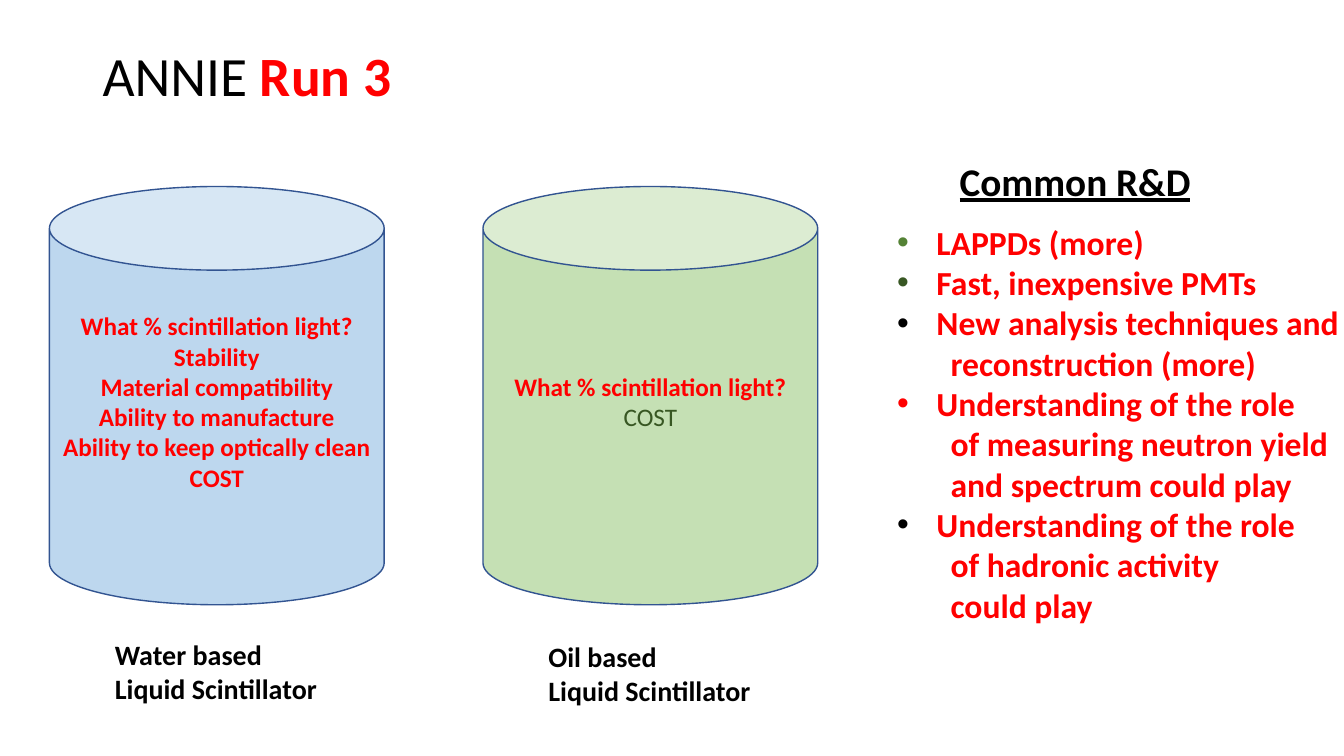
from dataclasses import dataclass

from lxml import etree
from pptx import Presentation
from pptx import util as u
from pptx.dml.color import RGBColor
from pptx.enum import shapes, text
from pptx.oxml import ns

FONT = "Calibri"
BLACK, RED, DARK_GREEN, MID_GREEN = "000000", "FF0000", "385723", "548235"
OUTLINE = "325491"
TANK_TOP, TANK_WIDTH, TANK_HEIGHT = 1.85, 3.32, 4.15
BULLET_INDENT, CONTINUATION_INDENT = 0.39, 0.53


@dataclass(frozen=True)
class Span:
    words: str
    size: float
    color: str = BLACK
    bold: bool = True
    underline: bool = False


@dataclass(frozen=True)
class Tank:
    left: float
    fill: str
    questions: list[Span]
    caption: str
    caption_top: float


@dataclass(frozen=True)
class Topic:
    bullet_color: str
    lines: list[str]


TANKS = [
    Tank(0.49, "BDD7EE",
         [Span(words, 18, RED) for words in (
             "What % scintillation light?", "Stability", "Material compatibility",
             "Ability to manufacture", "Ability to keep optically clean", "COST")],
         "Water based", 6.28),
    Tank(4.79, "C5E0B4",
         [Span("What % scintillation light?", 18, RED),
          Span("COST", 18, DARK_GREEN, bold=False)],
         "Oil based", 6.3),
]

TOPICS = [
    Topic(MID_GREEN, ["LAPPDs (more)"]),
    Topic(DARK_GREEN, ["Fast, inexpensive PMTs"]),
    Topic(BLACK, ["New analysis techniques and", "reconstruction (more)"]),
    Topic(RED, ["Understanding of the role", "of measuring neutron yield",
                "and spectrum could play"]),
    Topic(BLACK, ["Understanding of the role", "of hadronic activity", "could play"]),
]


def rgb(color: str) -> RGBColor:
    return RGBColor.from_string(color)


def add_spans(para, spans: list[Span]) -> None:
    for span in spans:
        run = para.add_run()
        run.text = span.words
        run.font.name = FONT
        run.font.size = u.Pt(span.size)
        run.font.bold = span.bold
        run.font.underline = span.underline
        run.font.color.rgb = rgb(span.color)


def write_lines(frame, lines: list[list[Span]]) -> list:
    """Put each list of spans in its own paragraph and return the paragraphs."""
    for index, spans in enumerate(lines):
        para = frame.paragraphs[0] if index == 0 else frame.add_paragraph()
        add_spans(para, spans)
    return list(frame.paragraphs)


def add_label(page, left: float, top: float, width: float, height: float,
              lines: list[list[Span]]) -> list:
    """Add a text box that fits its unwrapped lines; return its paragraphs."""
    box = page.shapes.add_textbox(*map(u.Inches, (left, top, width, height)))
    box.text_frame.word_wrap = False
    box.text_frame.auto_size = text.MSO_AUTO_SIZE.SHAPE_TO_FIT_TEXT
    return write_lines(box.text_frame, lines)


def add_title(page) -> None:
    box = page.shapes.add_textbox(*map(u.Inches, (0.92, 0.4, 11.5, 0.76)))
    box.text_frame.word_wrap = True
    box.text_frame.vertical_anchor = text.MSO_ANCHOR.MIDDLE
    spans = [Span("ANNIE ", 39.6, bold=False), Span("Run 3", 39.6, RED)]
    write_lines(box.text_frame, [spans])[0].line_spacing = 0.9


def add_tank(page, tank: Tank) -> None:
    can = page.shapes.add_shape(
        shapes.MSO_SHAPE.CAN,
        *map(u.Inches, (tank.left, TANK_TOP, TANK_WIDTH, TANK_HEIGHT)))
    can.shadow.inherit = False
    can.fill.solid()
    can.fill.fore_color.rgb = rgb(tank.fill)
    can.line.color.rgb = rgb(OUTLINE)
    can.line.width = u.Pt(1)
    frame = can.text_frame
    frame.word_wrap = True
    frame.vertical_anchor = text.MSO_ANCHOR.MIDDLE
    frame.margin_bottom = u.Inches(0.35)
    for para in write_lines(frame, [[question] for question in tank.questions]):
        para.alignment = text.PP_ALIGN.CENTER
    add_label(page, tank.left + 0.55, tank.caption_top, 2.22, 0.77,
              [[Span(tank.caption, 20)], [Span("Liquid Scintillator", 20)]])


def indent(para, left: float, first: float = 0) -> None:
    properties = para._p.get_or_add_pPr()
    properties.set("marL", str(u.Inches(left)))
    properties.set("indent", str(u.Inches(first)))


def add_bullet(para, color: str) -> None:
    properties = para._p.get_or_add_pPr()
    bullet_color = etree.SubElement(properties, ns.qn("a:buClr"))
    etree.SubElement(bullet_color, ns.qn("a:srgbClr"), val=color)
    etree.SubElement(properties, ns.qn("a:buFont"), typeface="Arial")
    etree.SubElement(properties, ns.qn("a:buChar"), char="•")


def add_topics(page) -> None:
    lines = [[Span(line, 24, RED)] for topic in TOPICS for line in topic.lines]
    paras = iter(add_label(page, 8.8, 2.15, 4.63, 4.14, lines))
    for topic in TOPICS:
        first, *rest = [next(paras) for _ in topic.lines]
        indent(first, BULLET_INDENT, -BULLET_INDENT)
        add_bullet(first, topic.bullet_color)
        for para in rest:
            indent(para, CONTINUATION_INDENT)


def main() -> None:
    deck = Presentation()
    deck.slide_width, deck.slide_height = u.Inches(13.33), u.Inches(7.5)
    page = deck.slides.add_slide(deck.slide_layouts[6])
    add_title(page)
    for tank in TANKS:
        add_tank(page, tank)
    add_topics(page)
    add_label(page, 9.42, 1.51, 2.51, 0.57,
              [[Span("Common R&D", 28, underline=True)]])
    deck.save("out.pptx")


if __name__ == "__main__":
    main()
